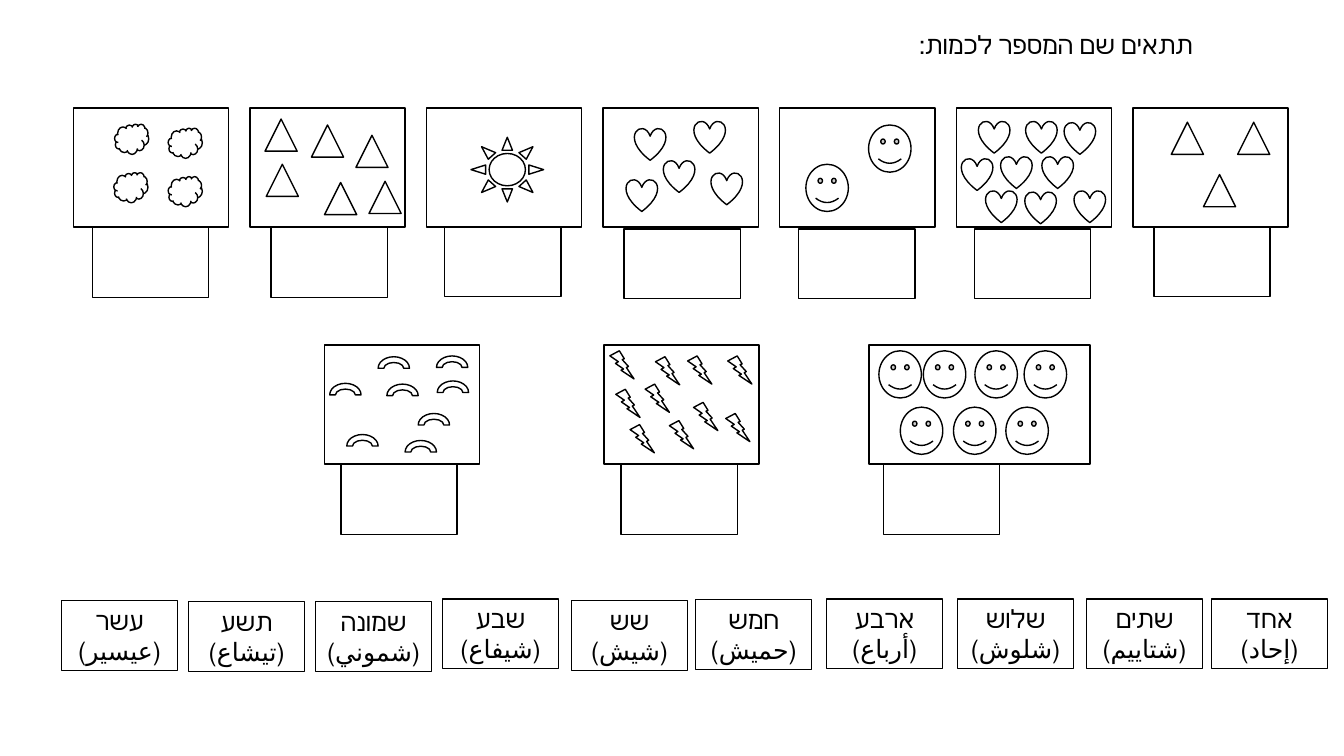
"""Build a worksheet slide for matching Hebrew number names to quantities."""
from pptx import Presentation
from pptx.dml.color import RGBColor
from pptx.enum.lang import MSO_LANGUAGE_ID
from pptx.enum.shapes import MSO_SHAPE
from pptx.enum.text import MSO_ANCHOR, MSO_AUTO_SIZE, PP_ALIGN
from pptx.util import Cm, Pt

RECTANGLE = MSO_SHAPE.RECTANGLE
TRIANGLE = MSO_SHAPE.ISOSCELES_TRIANGLE
HEART, SMILEY, SUN = MSO_SHAPE.HEART, MSO_SHAPE.SMILEY_FACE, MSO_SHAPE.SUN
CLOUD, BOLT, ARC = MSO_SHAPE.CLOUD, MSO_SHAPE.LIGHTNING_BOLT, MSO_SHAPE.BLOCK_ARC
CENTER, RIGHT = PP_ALIGN.CENTER, PP_ALIGN.RIGHT
MIDDLE = MSO_ANCHOR.MIDDLE
GROW = MSO_AUTO_SIZE.SHAPE_TO_FIT_TEXT
HEBREW = MSO_LANGUAGE_ID.HEBREW

COLORS = {"paper": "FFFFFF", "ink": "000000"}
FONT = "Calibri"
CARD_WIDTH, CARD_HEIGHT = 3.91, 3.0
ANSWER_WIDTH, ANSWER_HEIGHT = 2.93, 1.76
TOP_ROW_LEFT, TOP_ROW_TOP, TOP_ROW_PITCH = 1.85, 2.72, 4.45
MIDDLE_ROW_TOP = 8.69

SYMBOL_SIZES = {
    TRIANGLE: (0.81, 0.81), HEART: (0.79, 0.81), SMILEY: (1.07, 1.19),
    SUN: (1.83, 1.63), CLOUD: (0.86, 0.76), BOLT: (0.61, 0.71), ARC: (0.79, 0.58),
}

# Symbol, its spots inside the card, and the answer box offset from the card.
TOP_CARDS = [
    (CLOUD, [(2.39, 0.51), (2.39, 1.73), (1.02, 1.63), (1.04, 0.41)], (0.48, 3.02)),
    (TRIANGLE, [(0.38, 0.28), (3.0, 1.85), (1.88, 1.88), (0.41, 1.42),
                (2.67, 0.69), (1.55, 0.43)], (0.53, 3.02)),
    (SUN, [(1.12, 0.74)], (0.46, 3.0)),
    (HEART, [(0.79, 0.51), (0.58, 1.8), (1.52, 1.32), (2.29, 0.33),
             (2.72, 1.63)], (0.53, 3.05)),
    (SMILEY, [(2.24, 0.43), (0.66, 1.42)], (0.48, 3.05)),
    (HEART, [(2.72, 0.36), (0.56, 0.33), (0.13, 1.27), (1.12, 1.22), (2.16, 1.22),
             (2.97, 2.08), (1.73, 2.11), (0.74, 2.08), (1.75, 0.33)], (0.46, 3.05)),
    (TRIANGLE, [(2.64, 0.36), (1.78, 1.68), (0.97, 0.36)], (0.53, 3.0)),
]
MIDDLE_CARDS = [
    (8.18, CARD_WIDTH, ARC,
     [(2.82, 0.28), (2.84, 0.91), (2.36, 1.73), (2.03, 2.41), (0.56, 2.26),
      (1.57, 0.99), (0.13, 0.97), (1.35, 0.3)], (0.41, 3.02)),
    (15.22, CARD_WIDTH, BOLT,
     [(0.15, 0.15), (0.3, 1.12), (1.65, 1.91), (1.3, 0.3), (2.11, 0.28),
      (2.26, 1.45), (1.04, 0.99), (0.66, 2.01), (3.07, 1.73), (3.12, 0.28)],
     (0.43, 3.02)),
    (21.9, 5.57, SMILEY,
     [(3.45, 1.57), (2.13, 1.57), (0.79, 1.57), (3.91, 0.15), (2.67, 0.15),
      (1.37, 0.15), (0.25, 0.15)], (0.36, 3.02)),
]
NUMBER_NAMES = [
    (1.55, 15.14, "עשר", "(عيسير)"),
    (4.75, 15.16, "תשע", "(تيشاع)"),
    (7.95, 15.16, "שמונה", "(شموني)"),
    (11.15, 15.09, "שבע", "(شيفاع)"),
    (14.4, 15.14, "שש", "(شيش)"),
    (17.53, 15.11, "חמש", "(حميش)"),
    (20.83, 15.09, "ארבע", "(أرباع)"),
    (24.13, 15.09, "שלוש", "(شلوش)"),
    (27.38, 15.09, "שתים", "(شتاييم)"),
    (30.53, 15.09, "אחד", "(إحاد)"),
]


def add_outline(page, kind, left, top, width, height):
    """Add a white preset shape with a thin black line."""
    shape = page.shapes.add_shape(kind, Cm(left), Cm(top), Cm(width), Cm(height))
    shape.shadow.inherit = False
    shape.fill.solid()
    shape.fill.fore_color.rgb = RGBColor.from_string(COLORS["paper"])
    shape.line.color.rgb = RGBColor.from_string(COLORS["ink"])
    shape.line.width = Pt(1)
    return shape


def write_text(box, text, alignment):
    """Write one right-to-left paragraph into a box."""
    box.text_frame.word_wrap = True
    para = box.text_frame.paragraphs[0]
    para.text = text
    para.alignment = alignment
    para.font.size = Pt(18)
    para.font.color.rgb = RGBColor.from_string(COLORS["ink"])
    para.font.name = FONT
    para.font.language_id = HEBREW
    para._p.get_or_add_pPr().set("rtl", "1")


def add_title(page, left, top, width, height):
    """Add the instruction line."""
    box = page.shapes.add_textbox(Cm(left), Cm(top), Cm(width), Cm(height))
    write_text(box, "תתאים שם המספר לכמות:", RIGHT)
    box.text_frame.auto_size = GROW


def add_card(page, left, top, width, symbol, spots, answer_offset):
    """Add a card of symbols with an empty answer box below it."""
    add_outline(page, RECTANGLE, left, top, width, CARD_HEIGHT)
    for across, down in spots:
        add_outline(page, symbol, left + across, top + down, *SYMBOL_SIZES[symbol])
    across, down = answer_offset
    add_outline(page, RECTANGLE, left + across, top + down, ANSWER_WIDTH, ANSWER_HEIGHT)


def add_number_name(page, left, top, hebrew, arabic):
    """Add a box holding a number name above its Arabic sound."""
    box = add_outline(page, RECTANGLE, left, top, ANSWER_WIDTH, ANSWER_HEIGHT)
    box.text_frame.vertical_anchor = MIDDLE
    write_text(box, f"{hebrew}\v{arabic}", CENTER)


def main():
    """Build and save the slide."""
    deck = Presentation()
    deck.slide_width, deck.slide_height = Cm(33.87), Cm(19.05)
    page = deck.slides.add_slide(deck.slide_layouts[6])
    add_title(page, 20.45, 0.61, 9.86, 1.02)
    for index, card in enumerate(TOP_CARDS):
        left = TOP_ROW_LEFT + index * TOP_ROW_PITCH
        add_card(page, left, TOP_ROW_TOP, CARD_WIDTH, *card)
    for left, *card in MIDDLE_CARDS:
        add_card(page, left, MIDDLE_ROW_TOP, *card)
    for number_name in NUMBER_NAMES:
        add_number_name(page, *number_name)
    deck.save("out.pptx")


if __name__ == "__main__":
    main()
